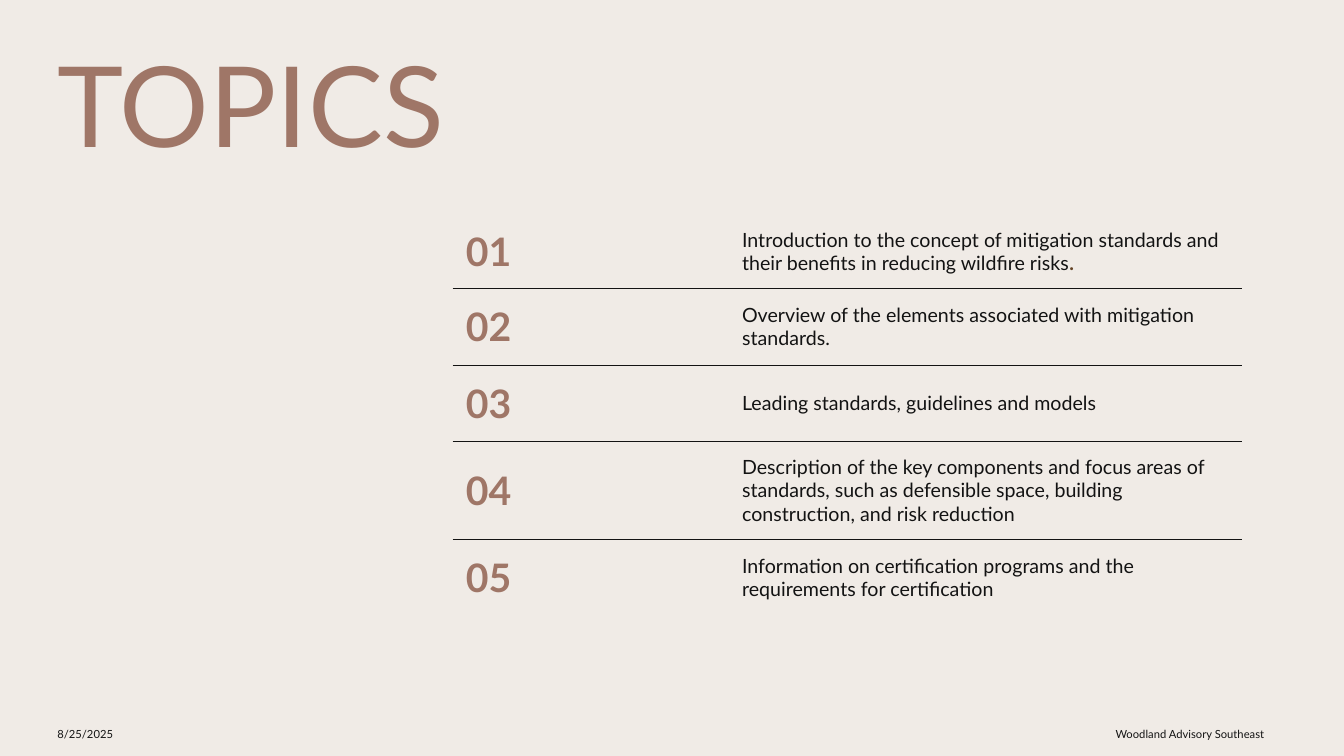
"""Build the topics slide: a large title, a ruled table of numbered topics and a footer."""
from dataclasses import dataclass

from lxml import etree
from pptx import Presentation
from pptx.dml.color import RGBColor
from pptx.enum.text import MSO_ANCHOR, MSO_AUTO_SIZE, PP_ALIGN
from pptx.oxml.ns import qn
from pptx.util import Inches, Pt

TOP, MIDDLE = MSO_ANCHOR.TOP, MSO_ANCHOR.MIDDLE
LEFT, RIGHT = PP_ALIGN.LEFT, PP_ALIGN.RIGHT
NO_AUTOFIT = MSO_AUTO_SIZE.NONE
TITLE_ONLY = 5


@dataclass(frozen=True)
class Theme:
    font: str = "Lato"
    paper: str = "F0EBE6"
    clay: str = "9F7667"
    ink: str = "131313"
    brown: str = "644426"
    title_size: int = 80
    number_size: int = 28
    body_size: int = 14
    footer_size: int = 8
    rule_width: float = 0.5


@dataclass(frozen=True)
class Topic:
    text: str
    height: float = 0.76
    ending: str = ""


@dataclass(frozen=True)
class FooterNote:
    text: str
    left: float
    width: float
    align: PP_ALIGN


THEME = Theme()
TOPICS = [
    Topic("Introduction to the concept of mitigation standards and their benefits "
          "in reducing wildfire risks", height=0.73, ending="."),
    Topic("Overview of the elements associated with mitigation standards."),
    Topic("Leading standards, guidelines and models"),
    Topic("Description of the key components and focus areas of standards, such as "
          "defensible space, building construction, and risk reduction", height=0.97),
    Topic("Information on certification programs and the requirements for certification"),
]
FOOTER = [
    FooterNote("8/25/2025", 0.47, 3.11, LEFT),
    FooterNote("Woodland Advisory Southeast", 9.73, 2.91, RIGHT),
]
COLUMN_WIDTHS = (2.74, 5.09)
CELL_MARGIN = Inches(0.13)


def add_span(para, text: str, *, size: int, color: str, bold: bool = False) -> None:
    """Append a formatted run to a paragraph."""
    span = para.add_run()
    span.text = text
    span.font.name = THEME.font
    span.font.size = Pt(size)
    span.font.bold = bold
    span.font.color.rgb = RGBColor.from_string(color)


def set_borders(cell, ruled_sides: str) -> None:
    """Rule the given sides of a cell and clear the others."""
    properties = cell._tc.get_or_add_tcPr()
    for position, side in enumerate("LRTB"):
        line = etree.Element(qn(f"a:ln{side}"), w=str(Pt(THEME.rule_width)))
        if side in ruled_sides:
            fill = etree.SubElement(line, qn("a:solidFill"))
            etree.SubElement(fill, qn("a:srgbClr"), val=THEME.ink)
        else:
            etree.SubElement(line, qn("a:noFill"))
        properties.insert(position, line)


def add_title(page, text: str) -> None:
    """Place and format the slide title."""
    box = page.shapes.title
    box.left, box.top, box.width, box.height = map(Inches, (0.47, 0.45, 12.08, 2))
    frame = box.text_frame
    frame.auto_size = NO_AUTOFIT
    frame.vertical_anchor = TOP
    para = frame.paragraphs[0]
    para.alignment = LEFT
    para.line_spacing = 0.9
    add_span(para, text, size=THEME.title_size, color=THEME.clay)


def add_topic_table(page, topics: list[Topic]) -> None:
    """Draw the numbered topics with a rule between rows."""
    height = sum(topic.height for topic in topics)
    frame = page.shapes.add_table(len(topics), len(COLUMN_WIDTHS), Inches(4.49), Inches(2.13),
                                  Inches(sum(COLUMN_WIDTHS)), Inches(height))
    table = frame.table
    table.first_row = table.horz_banding = False
    for column, width in zip(table.columns, COLUMN_WIDTHS):
        column.width = Inches(width)
    for index, (row, topic) in enumerate(zip(table.rows, topics)):
        row.height = Inches(topic.height)
        ruled_sides = ("T" if index else "") + ("B" if index < len(topics) - 1 else "")
        for cell in row.cells:
            cell.fill.background()
            cell.vertical_anchor = MIDDLE
            cell.margin_left = cell.margin_right = CELL_MARGIN
            cell.margin_top = cell.margin_bottom = CELL_MARGIN
            set_borders(cell, ruled_sides)
        number, description = (cell.text_frame.paragraphs[0] for cell in row.cells)
        add_span(number, f"{index + 1:02}", size=THEME.number_size, color=THEME.clay, bold=True)
        add_span(description, topic.text, size=THEME.body_size, color=THEME.ink)
        if topic.ending:
            add_span(description, topic.ending, size=THEME.body_size, color=THEME.brown, bold=True)


def add_footer_note(page, note: FooterNote) -> None:
    """Add one small text at the foot of the slide."""
    box = page.shapes.add_textbox(Inches(note.left), Inches(7.1), Inches(note.width), Inches(0.37))
    frame = box.text_frame
    frame.word_wrap = True
    frame.vertical_anchor = MIDDLE
    para = frame.paragraphs[0]
    para.alignment = note.align
    add_span(para, note.text, size=THEME.footer_size, color=THEME.ink)


def main() -> None:
    """Build and save the deck."""
    deck = Presentation()
    deck.slide_width, deck.slide_height = Inches(13.33), Inches(7.5)
    page = deck.slides.add_slide(deck.slide_layouts[TITLE_ONLY])
    background = page.background.fill
    background.solid()
    background.fore_color.rgb = RGBColor.from_string(THEME.paper)
    add_title(page, "TOPICS")
    add_topic_table(page, TOPICS)
    for note in FOOTER:
        add_footer_note(page, note)
    deck.save("out.pptx")


if __name__ == "__main__":
    main()
